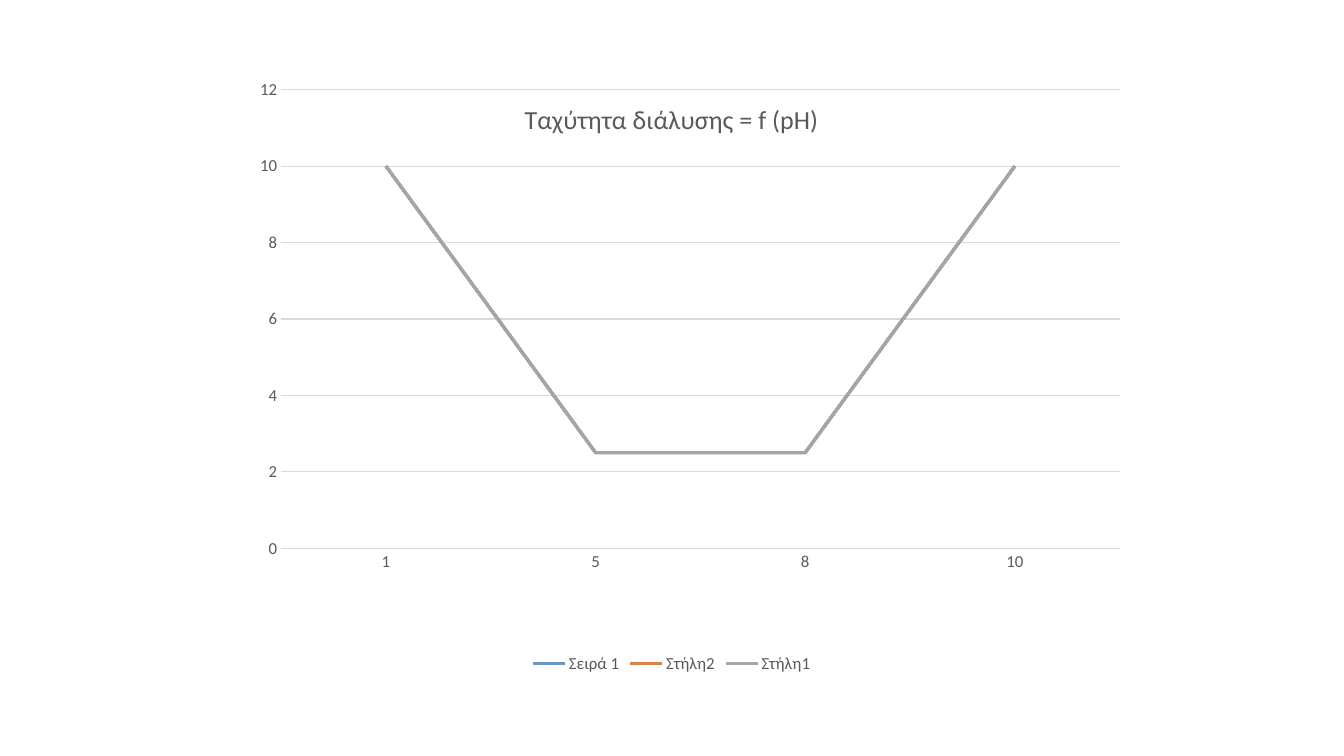
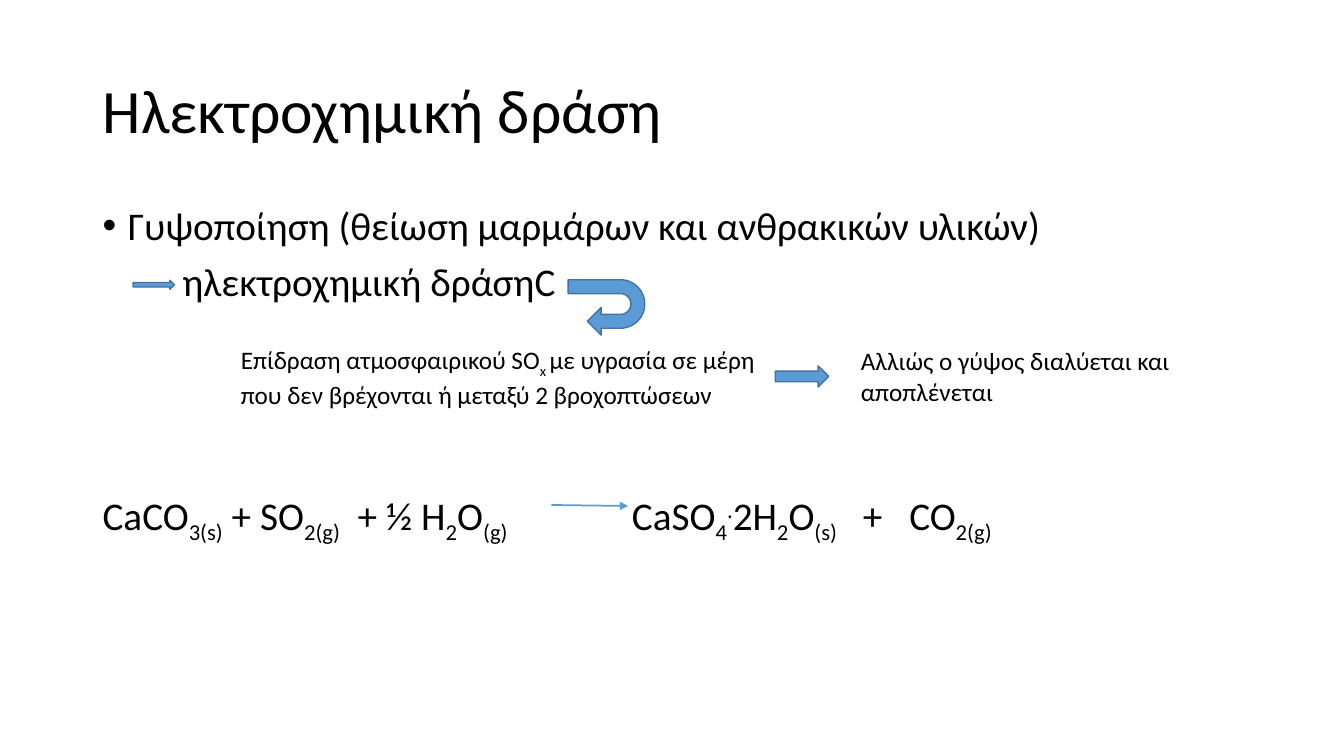
"""Build two slides on marble dissolution rate and electrochemical gypsum formation."""
from lxml import etree
from pptx import Presentation
from pptx.chart.data import CategoryChartData
from pptx.dml.color import RGBColor
from pptx.enum.chart import XL_CHART_TYPE as ChartType, XL_LEGEND_POSITION as LegendPosition
from pptx.enum.chart import XL_TICK_MARK as TickMark
from pptx.enum.shapes import MSO_CONNECTOR as Connector, MSO_SHAPE as Shape
from pptx.enum.text import MSO_ANCHOR as Anchor
from pptx.oxml import parse_xml
from pptx.oxml.ns import nsdecls, qn
from pptx.util import Inches, Pt

FONT = "Calibri"
BLACK = RGBColor(0x00, 0x00, 0x00)
GRAY_TEXT = RGBColor(0x59, 0x59, 0x59)
GRID = RGBColor(0xD9, 0xD9, 0xD9)
BLUE = RGBColor(0x5B, 0x9B, 0xD5)
BLUE_EDGE = RGBColor(0x43, 0x73, 0x9E)
ORANGE = RGBColor(0xED, 0x7D, 0x31)
GRAY = RGBColor(0xA5, 0xA5, 0xA5)
SUB = -25
SUPER = 30


def style_font(font, size, color):
    font.name = FONT
    font.size = Pt(size)
    font.color.rgb = color


def add_text(page, text, left, top, width, height, size=28, spacing=0.9,
             anchor=Anchor.TOP, bullet=False, tabs=()):
    """Add one paragraph; text is a string or a list of (string, baseline) pairs."""
    box = page.shapes.add_textbox(Inches(left), Inches(top), Inches(width), Inches(height))
    frame = box.text_frame
    frame.word_wrap = True
    frame.vertical_anchor = anchor
    para = frame.paragraphs[0]
    para.line_spacing = spacing
    properties = para._p.get_or_add_pPr()
    if bullet:
        properties.set("marL", str(Inches(0.25)))
        properties.set("indent", str(-Inches(0.25)))
        etree.SubElement(properties, qn("a:buFont"), typeface="Arial")
        etree.SubElement(properties, qn("a:buChar"), char="•")
    if tabs:
        tab_list = etree.SubElement(properties, qn("a:tabLst"))
        for stop in tabs:
            etree.SubElement(tab_list, qn("a:tab"), pos=str(Inches(stop)), algn="l")
    for words, baseline in [(text, 0)] if isinstance(text, str) else text:
        span = para.add_run()
        span.text = words
        style_font(span.font, size, BLACK)
        if baseline:
            span._r.get_or_add_rPr().set("baseline", str(baseline * 1000))


deck = Presentation()
deck.slide_width = Inches(13.33)
deck.slide_height = Inches(7.5)
blank = deck.slide_layouts[6]

page = deck.slides.add_slide(blank)
data = CategoryChartData()
data.categories = ["1", "5", "8", "10"]
data.add_series("Σειρά 1", [10, 2.5, 2.5, 10])
for name in ("Στήλη2", "Στήλη1"):
    data.add_series(name, [None] * 4)
chart = page.shapes.add_chart(ChartType.LINE_STACKED, Inches(2.22), Inches(0.79),
                              Inches(8.89), Inches(5.93), data).chart
style_font(chart.font, 12, GRAY_TEXT)

chart.has_title = True
title = chart.chart_title.text_frame
title.text = "Ταχύτητα διάλυσης = f (pH)"
style_font(title.paragraphs[0].runs[0].font, 18.6, GRAY_TEXT)
title.paragraphs[0].runs[0].font.bold = False

chart.has_legend = True
chart.legend.position = LegendPosition.BOTTOM
chart.legend.include_in_layout = False
style_font(chart.legend.font, 12, GRAY_TEXT)

for axis in (chart.category_axis, chart.value_axis):
    axis.major_tick_mark = TickMark.NONE
    axis.minor_tick_mark = TickMark.NONE
    style_font(axis.tick_labels.font, 12, GRAY_TEXT)
chart.value_axis.minimum_scale = 0
chart.value_axis.maximum_scale = 12
chart.value_axis.major_unit = 2
chart.value_axis.has_major_gridlines = True
chart.value_axis.format.line.fill.background()
for line in (chart.category_axis.format.line, chart.value_axis.major_gridlines.format.line):
    line.color.rgb = GRID
    line.width = Pt(0.75)

chart.plots[0].vary_by_categories = False
for series, color in zip(chart.plots[0].series, (BLUE, ORANGE, GRAY)):
    series.smooth = False
    series.format.line.color.rgb = color
    series.format.line.width = Pt(2.25)

chart_xml = chart.element
for blanks in chart_xml.iter(qn("c:dispBlanksAs")):
    blanks.set("val", "zero")
plot_area = chart_xml.find(".//" + qn("c:plotArea"))
for old_layout in plot_area.findall(qn("c:layout")):
    plot_area.remove(old_layout)
plot_area.insert(0, parse_xml(
    f'<c:layout {nsdecls("c")}><c:manualLayout><c:layoutTarget val="inner"/>'
    '<c:xMode val="edge"/><c:yMode val="edge"/><c:x val="0.064"/><c:y val="0.017"/>'
    '<c:w val="0.936"/><c:h val="0.767"/></c:manualLayout></c:layout>'))

page = deck.slides.add_slide(blank)
add_text(page, "Ηλεκτροχημική δράση", 0.92, 0.4, 11.5, 1.45, size=44, anchor=Anchor.MIDDLE)
add_text(page, "Γυψοποίηση (θείωση μαρμάρων και ανθρακικών υλικών)", 0.92, 2, 11.5, 0.55,
         bullet=True)
add_text(page, "ηλεκτροχημική δράσηC", 1.71, 2.56, 4.2, 0.55)
add_text(page, [("Επίδραση ατμοσφαιρικού SΟ", 0), ("x ", SUB),
                ("με υγρασία σε μέρη που δεν βρέχονται ή μεταξύ 2 βροχοπτώσεων", 0)],
         2.29, 3.37, 5.67, 0.71, size=18, spacing=1)
add_text(page, "Αλλιώς ο γύψος διαλύεται και αποπλένεται", 8.44, 3.38, 3.76, 0.71,
         size=18, spacing=1)
reaction = [("CaCO", 0), ("3(s)", SUB), (" + SO", 0), ("2(g)", SUB), ("\t+ ½ H", 0),
            ("2", SUB), ("O", 0), ("(g)", SUB), ("\tCaSO", 0), ("4", SUB), (".", SUPER),
            ("2H", 0), ("2", SUB), ("O", 0), ("(s)", SUB), ("\t+\tCO", 0), ("2(g)", SUB)]
add_text(page, reaction, 0.92, 4.83, 11.5, 0.6, tabs=(2.53, 5.25, 7.54, 8))

for kind, left, top, width, height, turn in (
        (Shape.RIGHT_ARROW, 1.32, 2.78, 0.41, 0.09, 0),
        (Shape.U_TURN_ARROW, 5.74, 2.67, 0.55, 0.76, 90),
        (Shape.RIGHT_ARROW, 7.69, 3.63, 0.53, 0.21, 0)):
    arrow = page.shapes.add_shape(kind, Inches(left), Inches(top), Inches(width), Inches(height))
    arrow.rotation = turn
    arrow.shadow.inherit = False
    arrow.fill.solid()
    arrow.fill.fore_color.rgb = BLUE
    arrow.line.color.rgb = BLUE_EDGE
    arrow.line.width = Pt(1)

reaction_arrow = page.shapes.add_connector(Connector.STRAIGHT, Inches(5.47), Inches(5.01),
                                           Inches(6.23), Inches(5.02))
reaction_arrow.line.color.rgb = BLUE
reaction_arrow.line.width = Pt(1.25)
etree.SubElement(reaction_arrow.line._get_or_add_ln(), qn("a:tailEnd"), type="triangle")
etree.SubElement(reaction_arrow._element.spPr, qn("a:effectLst"))

deck.save("out.pptx")
